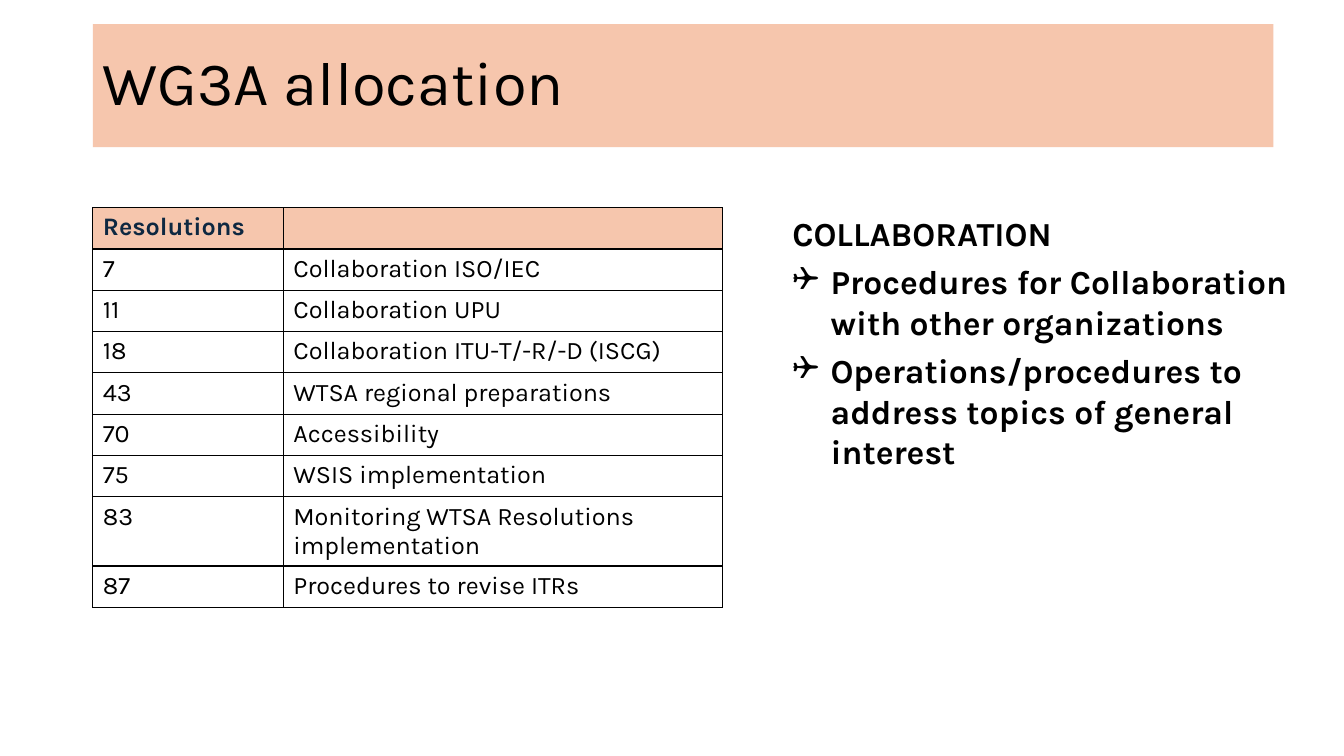
from pptx import Presentation, util as u
from pptx.dml.color import RGBColor
from pptx.enum import text
from pptx.oxml.ns import qn
from lxml import etree

WIDTH, HEIGHT = 13.33, 7.5
FONT, PEACH, BLACK, NAVY = "Karla", "F6C6AD", "000000", "0E2841"
LEFT, BODY_TOP = 0.92, 2.06

RESOLUTIONS = [
    ("7", "Collaboration ISO/IEC"),
    ("11", "Collaboration UPU"),
    ("18", "Collaboration ITU-T/-R/-D (ISCG)"),
    ("43", "WTSA regional preparations"),
    ("70", "Accessibility"),
    ("75", "WSIS implementation"),
    ("83", "Monitoring WTSA Resolutions implementation"),
    ("87", "Procedures to revise ITRs"),
]
TOPICS = [
    "Procedures for Collaboration with other organizations",
    "Operations/procedures to address topics of general interest",
]


def color(hex_string):
    return RGBColor.from_string(hex_string)


def inches(box):
    return [u.Inches(length) for length in box]


def write(paragraph, words, size=18, bold=False, fill=BLACK):
    paragraph.alignment = text.PP_ALIGN.LEFT
    run = paragraph.add_run()
    run.text = words
    font = run.font
    font.name, font.size, font.bold = FONT, u.Pt(size), bold
    font.color.rgb = color(fill)


def add_bullet(paragraph, mark, indent):
    properties = paragraph._p.get_or_add_pPr()
    properties.set("marL", str(u.Inches(indent)))
    properties.set("indent", str(-u.Inches(indent)))
    etree.SubElement(properties, qn("a:buFont"), typeface="Wingdings")
    etree.SubElement(properties, qn("a:buChar"), char=mark)


def add_borders(cell, width=1):
    properties = cell._tc.get_or_add_tcPr()
    for index, side in enumerate(("lnL", "lnR", "lnT", "lnB")):
        line = etree.Element(qn(f"a:{side}"), w=str(u.Pt(width)))
        fill = etree.SubElement(line, qn("a:solidFill"))
        etree.SubElement(fill, qn("a:srgbClr"), val=BLACK)
        properties.insert(index, line)


# Title band
def add_title(slide, box):
    title = slide.shapes.title
    title.left, title.top, title.width, title.height = inches(box)
    title.fill.solid()
    title.fill.fore_color.rgb = color(PEACH)
    frame = title.text_frame
    frame.word_wrap = True
    frame.vertical_anchor = text.MSO_ANCHOR.MIDDLE
    frame.paragraphs[0].line_spacing = 0.9
    write(frame.paragraphs[0], "WG3A allocation", size=44)


# Table of resolutions
def add_resolutions(slide, box, column_shares=(0.3024, 0.6976), row_height=0.41):
    rows = [("Resolutions", "")] + RESOLUTIONS
    table = slide.shapes.add_table(len(rows), 2, *inches(box)).table
    table.horz_banding = False
    for column, share in zip(table.columns, column_shares):
        column.width = u.Inches(box[2] * share)
    for r, row in enumerate(rows):
        table.rows[r].height = u.Inches(row_height)
        header = r == 0
        for c, words in enumerate(row):
            cell = table.cell(r, c)
            if header:
                cell.fill.solid()
                cell.fill.fore_color.rgb = color(PEACH)
            else:
                cell.fill.background()
            add_borders(cell)
            if words:
                write(cell.text_frame.paragraphs[0], words, bold=header,
                      fill=NAVY if header else BLACK)


# Collaboration topics
def add_topics(slide, box):
    frame = slide.shapes.add_textbox(*inches(box)).text_frame
    frame.word_wrap = True
    frame.auto_size = text.MSO_AUTO_SIZE.SHAPE_TO_FIT_TEXT
    write(frame.paragraphs[0], "COLLABORATION", size=24, bold=True)
    for topic in TOPICS:
        paragraph = frame.add_paragraph()
        paragraph.space_before = u.Pt(6)
        add_bullet(paragraph, "❑", 0.38)
        write(paragraph, topic, size=24, bold=True)


def main():
    deck = Presentation()
    deck.slide_width, deck.slide_height = inches((WIDTH, HEIGHT))
    slide = deck.slides.add_slide(deck.slide_layouts[5])
    add_title(slide, (LEFT, 0.24, 11.71, 1.22))
    add_resolutions(slide, (LEFT, BODY_TOP, 6.25, 3.69))
    add_topics(slide, (7.76, BODY_TOP, 5.14, 2.69))
    deck.save("out.pptx")


if __name__ == "__main__":
    main()
